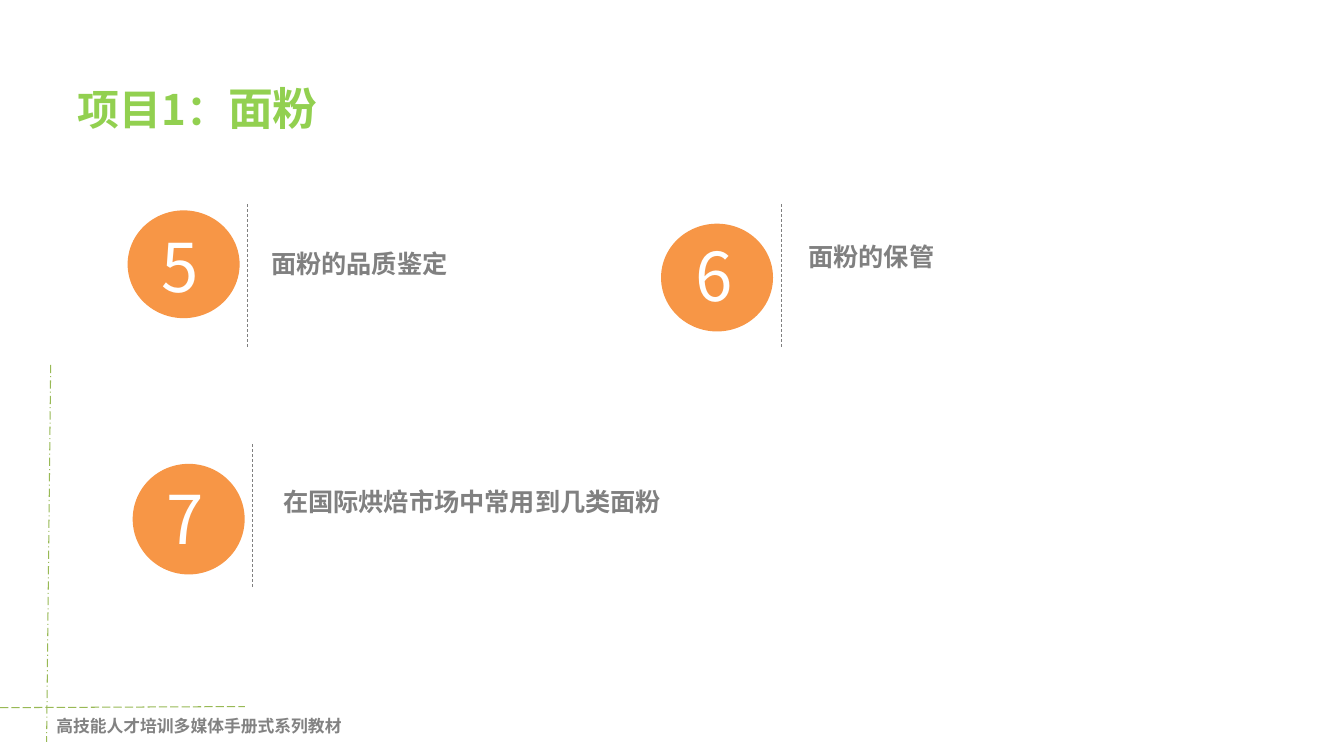
import pptx
import pptx.util
import pptx.dml.color
import pptx.enum.dml
import pptx.enum.shapes
import pptx.enum.text
import pptx.oxml.ns
import lxml.etree
from dataclasses import dataclass

Pt = pptx.util.Pt
DASH = pptx.enum.dml.MSO_LINE
ANCHOR = pptx.enum.text.MSO_ANCHOR

# Content
TITLE = [("项目1：", 30), ("面粉", 32)]
FOOTER = "高技能人才培训多媒体手册式系列教材"
# Divider top is the reference point; offsets are (dx, dy) or dy from it
TOPICS = [
    dict(number="5", label="面粉的品质鉴定", divider=(177, 146), disc=(4.3, 77),
         number_dy=11.5, label_at=(9.5, 27.5), label_w=245),
    dict(number="6", label="面粉的保管", divider=(558, 146), disc=(13.8, 77),
         number_dy=18, label_at=(12.3, 22.5), label_w=245),
    dict(number="7", label="在国际烘焙市场中常用到几类面粉", divider=(180.6, 317.5),
         disc=(13.8, 79), number_dy=20, label_at=(14.5, 26), label_w=508),
]
GUIDES = [  # start, end, dash
    ((36.2, 260.6), (33.3, 530), DASH.LONG_DASH_DOT),
    ((0, 505.5), (175, 504.7), DASH.LONG_DASH),
]

# Geometry shared by the topics
DIVIDER_H = 103
DISC_DX, DISC_W = -85.8, 80
NUMBER_DX, NUMBER_W, NUMBER_H = -68.4, 52.5, 65.5
LABEL_H = 29


@dataclass
class Theme:
    font: str = "Noto Sans CJK SC"
    footer_font: str = "Times New Roman"
    title: str = "92D050"
    disc: str = "F79646"
    number: str = "FFFFFF"
    label: str = "808080"
    footer: str = "828282"
    guide: str = "98B955"
    number_size: int = 48
    label_size: int = 18
    footer_size: int = 12


theme = Theme()


def rgb(value):
    return pptx.dml.color.RGBColor.from_string(value)


def format_run(r, size, color, bold=True, font=theme.font):
    r.font.size, r.font.bold, r.font.name = Pt(size), bold, font
    r.font.color.rgb = rgb(color)
    if font == theme.font:  # same face for Chinese characters
        ea = lxml.etree.SubElement(r._r.get_or_add_rPr(), pptx.oxml.ns.qn("a:ea"))
        ea.set("typeface", font)


def add_line(shapes, start, end, color, width, dash):
    ends = [Pt(v) for v in (*start, *end)]
    line = shapes.add_connector(pptx.enum.shapes.MSO_CONNECTOR.STRAIGHT, *ends)
    line.line.color.rgb, line.line.width = rgb(color), Pt(width)
    line.line.dash_style = dash
    sp_pr = line._element.spPr
    lxml.etree.SubElement(sp_pr, pptx.oxml.ns.qn("a:effectLst"))


def add_text(shapes, text, box, wrap=True, **style):
    tf = shapes.add_textbox(*[Pt(v) for v in box]).text_frame
    tf.text, tf.word_wrap = text, wrap
    format_run(tf.paragraphs[0].runs[0], **style)


def add_topic(slide, topic):
    shapes = slide.shapes.add_group_shape().shapes
    x, y = topic["divider"]
    add_line(shapes, (x, y), (x, y + DIVIDER_H), theme.label, 0.5, DASH.DASH)

    disc_dy, disc_h = topic["disc"]
    disc = shapes.add_shape(pptx.enum.shapes.MSO_SHAPE.OVAL, Pt(x + DISC_DX),
                            Pt(y + disc_dy), Pt(DISC_W), Pt(disc_h))
    disc.shadow.inherit = False
    disc.fill.solid()
    disc.fill.fore_color.rgb = rgb(theme.disc)
    disc.line.fill.background()

    add_text(shapes, topic["number"],
             (x + NUMBER_DX, y + topic["number_dy"], NUMBER_W, NUMBER_H),
             size=theme.number_size, color=theme.number, bold=False)
    dx, dy = topic["label_at"]
    add_text(shapes, topic["label"], (x + dx, y + dy, topic["label_w"], LABEL_H),
             size=theme.label_size, color=theme.label)


def main():
    prs = pptx.Presentation()
    prs.slide_width, prs.slide_height = Pt(960), Pt(540)
    slide = prs.slides.add_slide(prs.slide_layouts.get_by_name("Title Only"))

    # Corner guides and footer
    for start, end, dash in GUIDES:
        add_line(slide.shapes, start, end, theme.guide, 0.75, dash)
    add_text(slide.shapes, FOOTER, (33.1, 507.6, 220, 21.6), wrap=False,
             size=theme.footer_size, color=theme.footer, font=theme.footer_font)

    # Title
    title = slide.shapes.title
    title.left, title.top, title.width, title.height = Pt(48), Pt(39.6), Pt(864), Pt(74)
    tf = title.text_frame
    tf.vertical_anchor = ANCHOR.MIDDLE
    tf.auto_size = pptx.enum.text.MSO_AUTO_SIZE.NONE
    p = tf.paragraphs[0]
    p.alignment = pptx.enum.text.PP_ALIGN.LEFT
    for text, size in TITLE:
        r = p.add_run()
        r.text = text
        format_run(r, size, theme.title)

    # Numbered topics
    for topic in TOPICS:
        add_topic(slide, topic)

    prs.save("out.pptx")


if __name__ == "__main__":
    main()
